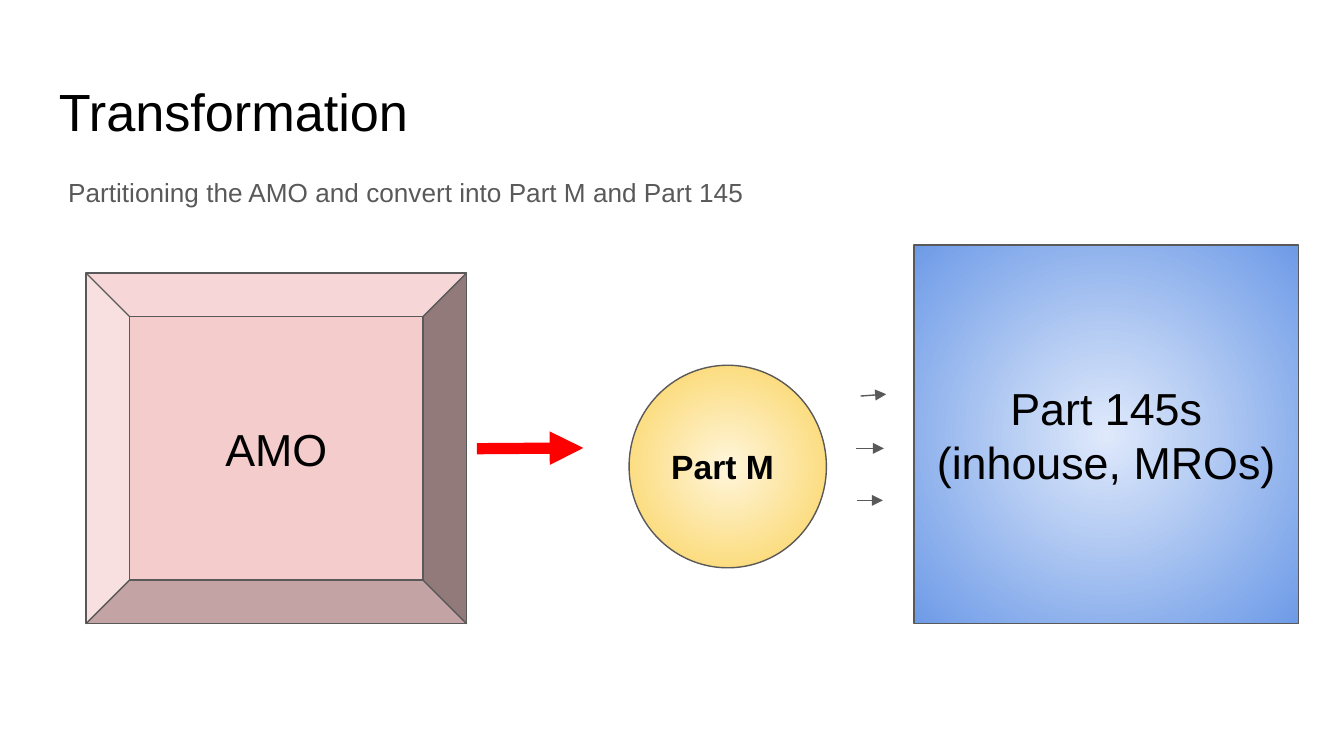
"""Build the Transformation slide: an AMO split into Part M and Part 145s."""
from lxml.etree import SubElement
from pptx import Presentation
from pptx.dml.color import RGBColor
from pptx.enum.shapes import MSO_CONNECTOR, MSO_SHAPE
from pptx.enum.text import MSO_ANCHOR, PP_ALIGN
from pptx.oxml import parse_xml
from pptx.oxml.ns import nsdecls, qn
from pptx.util import Pt

COLORS = {
    "black": "000000", "gray": "595959", "red": "FF0000", "pink": "F4CCCC",
    "pale blue": "DFE9FB", "blue": "6E9BE7",
    "pale yellow": "FFF6DB", "yellow": "FAD25C",
}
RADIAL = (
    f'<a:path {nsdecls("a")} path="circle">'
    '<a:fillToRect l="50000" t="50000" r="50000" b="50000"/></a:path>'
)


def rgb(name):
    return RGBColor.from_string(COLORS[name])


def write(shape, text, size, color="black", bold=False, align=PP_ALIGN.LEFT, anchor=MSO_ANCHOR.TOP):
    frame = shape.text_frame
    frame.word_wrap = True
    frame.vertical_anchor = anchor
    frame.margin_left = frame.margin_right = frame.margin_top = frame.margin_bottom = Pt(7.2)
    frame.text = text
    for paragraph in frame.paragraphs:
        paragraph.alignment = align
        for run in paragraph.runs:
            run.font.name = "Arial"
            run.font.size = Pt(size)
            run.font.bold = bold
            run.font.color.rgb = rgb(color)


presentation = Presentation()
presentation.slide_width = Pt(720)
presentation.slide_height = Pt(405)
slide = presentation.slides.add_slide(presentation.slide_layouts[6])

title = slide.shapes.add_textbox(Pt(24.5), Pt(35), Pt(671), Pt(45))
write(title, "Transformation", 28)

body = slide.shapes.add_textbox(Pt(24.5), Pt(80), Pt(681), Pt(288))
write(body, " ", 18, "gray")
paragraph = body.text_frame.paragraphs[0]
paragraph.line_spacing = 1.15
paragraph.space_after = Pt(16)
run = paragraph.add_run()
run.text = "Partitioning the AMO and convert into Part M and Part 145"
run.font.name = "Arial"
run.font.size = Pt(14)
run.font.color.rgb = rgb("gray")

blocks = [
    (MSO_SHAPE.FLOWCHART_PROCESS, (489.6, 131.2, 206, 203), ("pale blue", "blue"),
     "Part 145s\n(inhouse, MROs)", 24, False, PP_ALIGN.CENTER),
    (MSO_SHAPE.BEVEL, (46, 146.2, 204, 188), ("pink",), "AMO", 24, False, PP_ALIGN.CENTER),
    (MSO_SHAPE.FLOWCHART_CONNECTOR, (337, 195.7, 105.7, 108.5), ("pale yellow", "yellow"),
     "Part M", 18, True, PP_ALIGN.LEFT),
]
for kind, box, fills, text, size, bold, align in blocks:
    shape = slide.shapes.add_shape(kind, *map(Pt, box))
    shape.shadow.inherit = False
    shape.line.color.rgb = rgb("gray")
    shape.line.width = Pt(0.75)
    if len(fills) == 1:
        shape.fill.solid()
        shape.fill.fore_color.rgb = rgb(fills[0])
    else:
        shape.fill.gradient()
        for stop, position, color in zip(shape.fill.gradient_stops, (0, 1), fills):
            stop.position = position
            stop.color.rgb = rgb(color)
        gradient = shape._element.spPr.find(qn("a:gradFill"))
        gradient.replace(gradient.find(qn("a:lin")), parse_xml(RADIAL))
    write(shape, text, size, bold=bold, align=align, anchor=MSO_ANCHOR.MIDDLE)

arrows = [
    ((255.5, 240.4, 312.5, 240), "red", 6),
    ((458.5, 240.2, 473.5, 240.2), "gray", 0.75),
    ((461, 212.2, 474.8, 211.2), "gray", 0.75),
    ((459.2, 268.1, 473, 268.1), "gray", 0.75),
]
for ends, color, width in arrows:
    arrow = slide.shapes.add_connector(MSO_CONNECTOR.STRAIGHT, *map(Pt, ends))
    arrow.line.color.rgb = rgb(color)
    arrow.line.width = Pt(width)
    SubElement(arrow.line._get_or_add_ln(), qn("a:tailEnd"), type="triangle")
    SubElement(arrow._element.spPr, qn("a:effectLst"))

presentation.save("out.pptx")
